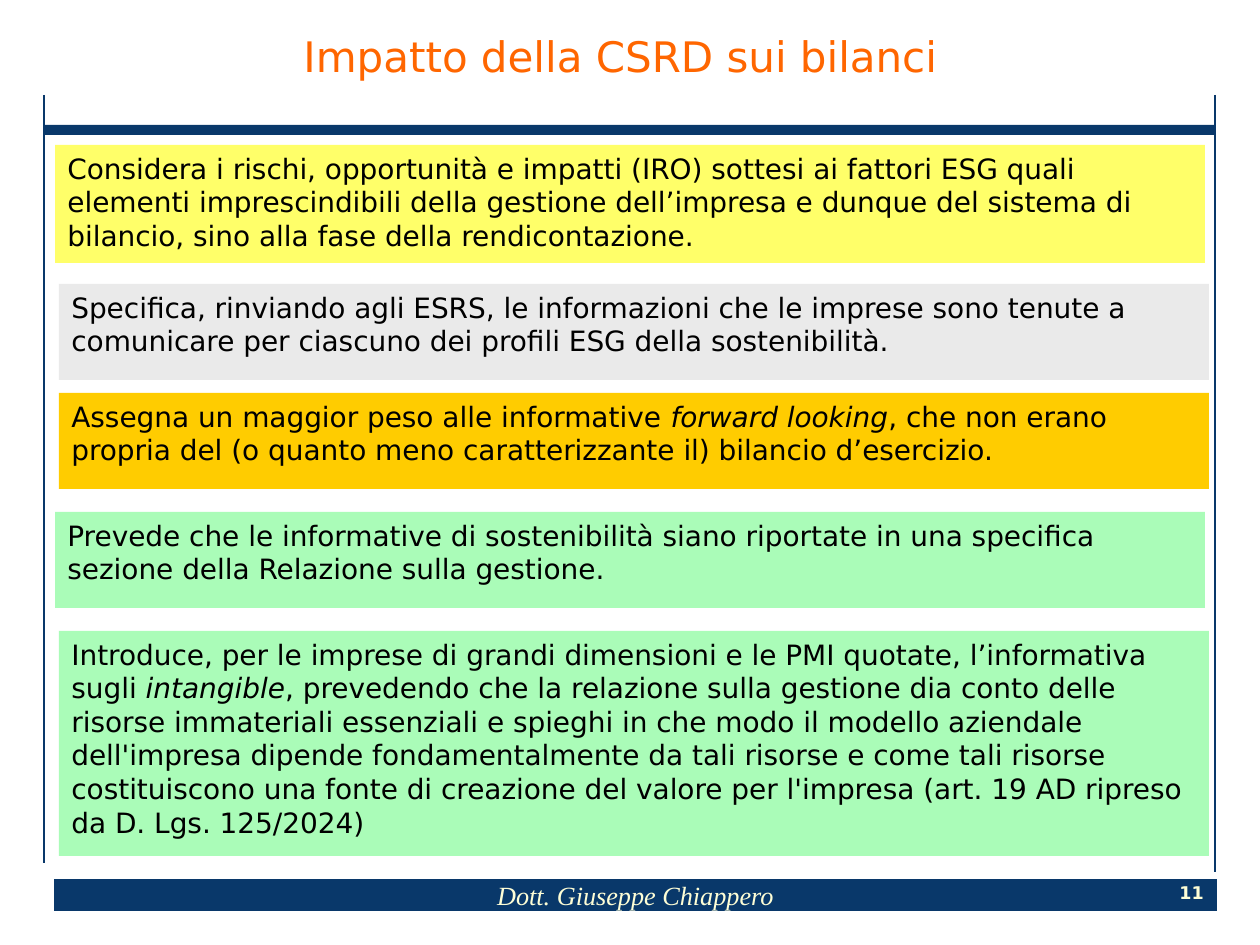
from pptx import Presentation
from pptx.dml.color import RGBColor
from pptx.enum.shapes import MSO_CONNECTOR as CONNECTOR, MSO_SHAPE as SHAPE
from pptx.enum.text import MSO_ANCHOR as ANCHOR, MSO_AUTO_SIZE as AUTO_SIZE, PP_ALIGN as ALIGN
from pptx.oxml.ns import qn
from pptx.util import Pt
from lxml.etree import SubElement

EMU_PER_PX = 914400 / 126
COLOURS = {
    "navy": "09386A", "cream": "FEFED6", "orange": "FF6600", "black": "000000",
    "yellow": "FFFF69", "grey": "EAEAEA", "gold": "FFCC00", "green": "AAFCB8",
}
SANS, SERIF = "DejaVu Sans", "Times New Roman"
STATEMENT_WIDTH = 1150
STATEMENTS = [
    (55, 145, 118, "yellow", [
        "Considera i rischi, opportunità e impatti (IRO) sottesi ai fattori ESG quali elementi "
        "imprescindibili della gestione dell’impresa e dunque del sistema di bilancio, sino alla "
        "fase della rendicontazione."]),
    (59, 284, 96, "grey", [
        "Specifica, rinviando agli ESRS, le informazioni che le imprese sono tenute a comunicare "
        "per ciascuno dei profili ESG della sostenibilità."]),
    (59, 393, 96, "gold", [
        "Assegna un maggior peso alle informative ", "forward looking",
        ", che non erano propria del (o quanto meno caratterizzante il) bilancio d’esercizio."]),
    (55, 512, 96, "green", [
        "Prevede che le informative di sostenibilità siano riportate in una specifica sezione "
        "della Relazione sulla gestione."]),
    (59, 631, 225, "green", [
        "Introduce, per le imprese di grandi dimensioni e le PMI quotate, l’informativa sugli ",
        "intangible",
        ", prevedendo che la relazione sulla gestione dia conto delle risorse immateriali "
        "essenziali e spieghi in che modo il modello aziendale dell'impresa dipende "
        "fondamentalmente da tali risorse e come tali risorse costituiscono una fonte di "
        "creazione del valore per l'impresa (art. 19 AD ripreso da D. Lgs. 125/2024)"]),
]


def px(length):
    return round(length * EMU_PER_PX)


def colour(name):
    return RGBColor.from_string(COLOURS[name])


class SlideBuilder:
    """Holds the style and the current slide, and draws each kind of element."""

    def __init__(self, slide):
        self.slide = slide

    def style(self, run, size, ink, face=SANS, bold=False, italic=False):
        font = run.font
        font.size, font.name = Pt(size), face
        font.bold, font.italic = bold, italic
        font.color.rgb = colour(ink)

    def title(self, text, left, top, width, height):
        heading = self.slide.shapes.title
        heading.left, heading.top = px(left), px(top)
        heading.width, heading.height = px(width), px(height)
        frame = heading.text_frame
        frame.text = text
        frame.auto_size, frame.word_wrap = AUTO_SIZE.NONE, False
        frame.vertical_anchor = ANCHOR.MIDDLE
        paragraph = frame.paragraphs[0]
        paragraph.alignment, paragraph.line_spacing = ALIGN.CENTER, 0.8
        self.style(paragraph.runs[0], 24, "orange")

    def bar(self, left, top, width, height, fill):
        bar = self.slide.shapes.add_shape(
            SHAPE.RECTANGLE, px(left), px(top), px(width), px(height))
        bar.shadow.inherit = False
        bar.fill.solid()
        bar.fill.fore_color.rgb = colour(fill)
        bar.line.fill.background()
        return bar

    def rule(self, x, top, bottom):
        rule = self.slide.shapes.add_connector(
            CONNECTOR.STRAIGHT, px(x), px(top), px(x), px(bottom))
        rule.line.color.rgb, rule.line.width = colour("navy"), Pt(1)
        SubElement(rule._element.spPr, qn("a:effectLst"))

    def statement(self, left, top, height, fill, parts):
        frame = self.bar(left, top, STATEMENT_WIDTH, height, fill).text_frame
        frame.word_wrap, frame.vertical_anchor = True, ANCHOR.TOP
        paragraph = frame.paragraphs[0]
        paragraph.alignment = ALIGN.LEFT
        for index, part in enumerate(parts):
            run = paragraph.add_run()
            run.text = part
            self.style(run, 16, "black", italic=index % 2 == 1)

    def footer(self, text, left, top, width, height):
        frame = self.bar(left, top, width, height, "navy").text_frame
        frame.text = text
        frame.vertical_anchor = ANCHOR.MIDDLE
        frame.paragraphs[0].alignment = ALIGN.CENTER
        self.style(frame.paragraphs[0].runs[0], 15, "cream", SERIF, italic=True)

    def page_number(self, text, left, top, width, height):
        frame = self.slide.shapes.add_textbox(
            px(left), px(top), px(width), px(height)).text_frame
        frame.margin_left = frame.margin_right = frame.margin_top = frame.margin_bottom = 0
        frame.text = text
        frame.word_wrap, frame.vertical_anchor = False, ANCHOR.MIDDLE
        frame.paragraphs[0].alignment = ALIGN.CENTER
        self.style(frame.paragraphs[0].runs[0], 10, "cream", bold=True)


def main():
    deck = Presentation()
    deck.slide_width, deck.slide_height = px(1260), px(945)
    builder = SlideBuilder(deck.slides.add_slide(deck.slide_layouts[5]))
    builder.bar(44, 125, 1171, 10, "navy")
    builder.footer("Dott. Giuseppe Chiappero", 54, 879, 1163, 32)
    builder.rule(44, 95, 863)
    builder.rule(1215, 95, 872)
    builder.page_number("11", 1175, 880, 33, 25)
    builder.title("Impatto della CSRD sui bilanci", 25, 29, 1191, 63)
    for statement in STATEMENTS:
        builder.statement(*statement)
    deck.save("out.pptx")


if __name__ == "__main__":
    main()
